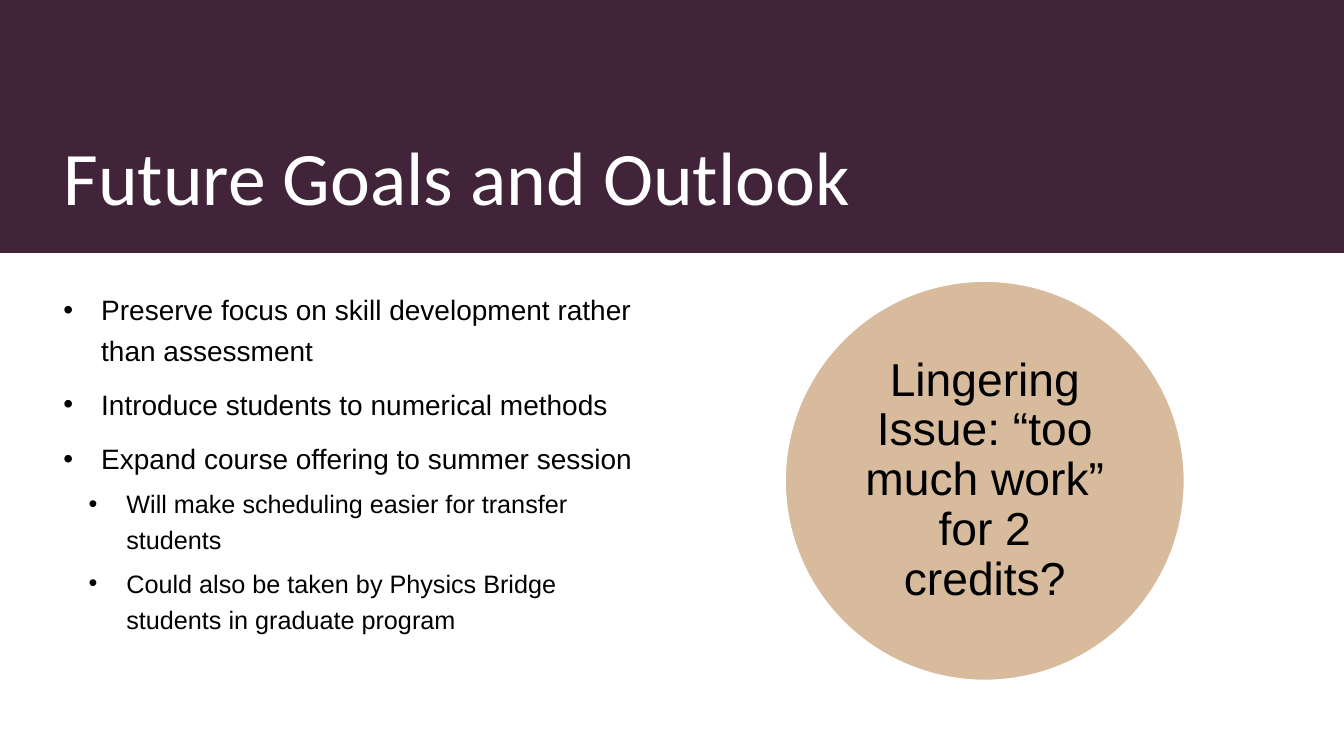
from lxml import etree
from pptx import Presentation
from pptx.dml.color import RGBColor
from pptx.enum import shapes, text
from pptx.oxml.ns import qn
from pptx.util import Pt

PLUM = RGBColor(0x41, 0x24, 0x39)
BRONZE = RGBColor(0xB1, 0x79, 0x3B)
WHITE = RGBColor(0xFF, 0xFF, 0xFF)
BLACK = RGBColor(0, 0, 0)

SLIDE_WIDTH, SLIDE_HEIGHT = 960, 540
MARGIN = 38.2
BODY_TOP, BODY_HEIGHT = 200.9, 285.1

TITLE_FONT = {"name": "Calibri", "size": Pt(54), "color": WHITE}
ISSUE_FONT = {"name": "Arial", "size": Pt(33), "color": BLACK}
GOAL_FONTS = [
    {"name": "Arial", "size": Pt(20), "color": BLACK},
    {"name": "Arial", "size": Pt(18), "color": BLACK},
]
GOAL_SPACING = [
    {"line_spacing": 1.2, "space_before": Pt(10)},
    {"line_spacing": 1.2, "space_before": Pt(5)},
]
GOAL_INDENTS = [27, 45]
BULLET_HANG = 27

GOALS = [
    (0, "Preserve focus on skill development rather than assessment"),
    (0, "Introduce students to numerical methods"),
    (0, "Expand course offering to summer session"),
    (1, "Will make scheduling easier for transfer students"),
    (1, "Could also be taken by Physics Bridge students in graduate program"),
]


def set_attributes(target, values):
    for name, value in values.items():
        setattr(target, name, value)


def add_filled_shape(slide, kind, box, color):
    shape = slide.shapes.add_shape(kind, *map(Pt, box))
    shape.shadow.inherit = False
    shape.fill.solid()
    shape.fill.fore_color.rgb = color
    shape.line.fill.background()
    return shape


def set_opacity(shape, percent):
    color = shape.fill._xPr.find(qn("a:solidFill"))[0]
    etree.SubElement(color, qn("a:alpha"), val=str(percent * 1000))


def add_text_frame(slide, box, **frame_format):
    frame = slide.shapes.add_textbox(*map(Pt, box)).text_frame
    set_attributes(frame, {"word_wrap": True, **frame_format})
    return frame


def write_paragraph(paragraph, content, font, **paragraph_format):
    set_attributes(paragraph, paragraph_format)
    run = paragraph.add_run()
    run.text = content
    run.font.color.rgb = font["color"]
    set_attributes(run.font, {"name": font["name"], "size": font["size"]})


def add_bullet(paragraph, indent):
    properties = paragraph._p.get_or_add_pPr()
    properties.set("marL", str(Pt(indent)))
    properties.set("indent", str(Pt(-BULLET_HANG)))
    etree.SubElement(properties, qn("a:buFont"), typeface="Arial")
    etree.SubElement(properties, qn("a:buChar"), char="•")


def add_title(slide):
    add_filled_shape(slide, shapes.MSO_SHAPE.RECTANGLE,
                     (0, 0, SLIDE_WIDTH, 180.7), PLUM)
    frame = add_text_frame(slide, (MARGIN, 28.8, 887, 133.2),
                           vertical_anchor=text.MSO_ANCHOR.BOTTOM)
    write_paragraph(frame.paragraphs[0], "Future Goals and Outlook",
                    TITLE_FONT, line_spacing=0.9)


def add_goals(slide):
    frame = add_text_frame(slide, (MARGIN, BODY_TOP, 437, BODY_HEIGHT))
    for index, (level, goal) in enumerate(GOALS):
        paragraph = frame.add_paragraph() if index else frame.paragraphs[0]
        write_paragraph(paragraph, goal, GOAL_FONTS[level],
                        level=level, **GOAL_SPACING[level])
        add_bullet(paragraph, GOAL_INDENTS[level])


def add_issue_circle(slide):
    left, inset = 560.9, 41.75
    circle = add_filled_shape(slide, shapes.MSO_SHAPE.OVAL,
                              (left, BODY_TOP, BODY_HEIGHT, BODY_HEIGHT), BRONZE)
    set_opacity(circle, 50)
    circle.line.color.rgb = WHITE
    circle.line.width = Pt(1)

    side = BODY_HEIGHT - 2 * inset
    margins = {f"margin_{edge}": Pt(10) for edge in ("left", "top", "right", "bottom")}
    frame = add_text_frame(slide, (left + inset, BODY_TOP + inset, side, side),
                           vertical_anchor=text.MSO_ANCHOR.MIDDLE, **margins)
    write_paragraph(frame.paragraphs[0],
                    "Lingering Issue: “too much work” for 2 credits?", ISSUE_FONT,
                    alignment=text.PP_ALIGN.CENTER, line_spacing=0.9)


def main():
    presentation = Presentation()
    presentation.slide_width = Pt(SLIDE_WIDTH)
    presentation.slide_height = Pt(SLIDE_HEIGHT)
    slide = presentation.slides.add_slide(presentation.slide_layouts[6])
    add_title(slide)
    add_goals(slide)
    add_issue_circle(slide)
    presentation.save("out.pptx")


if __name__ == "__main__":
    main()
